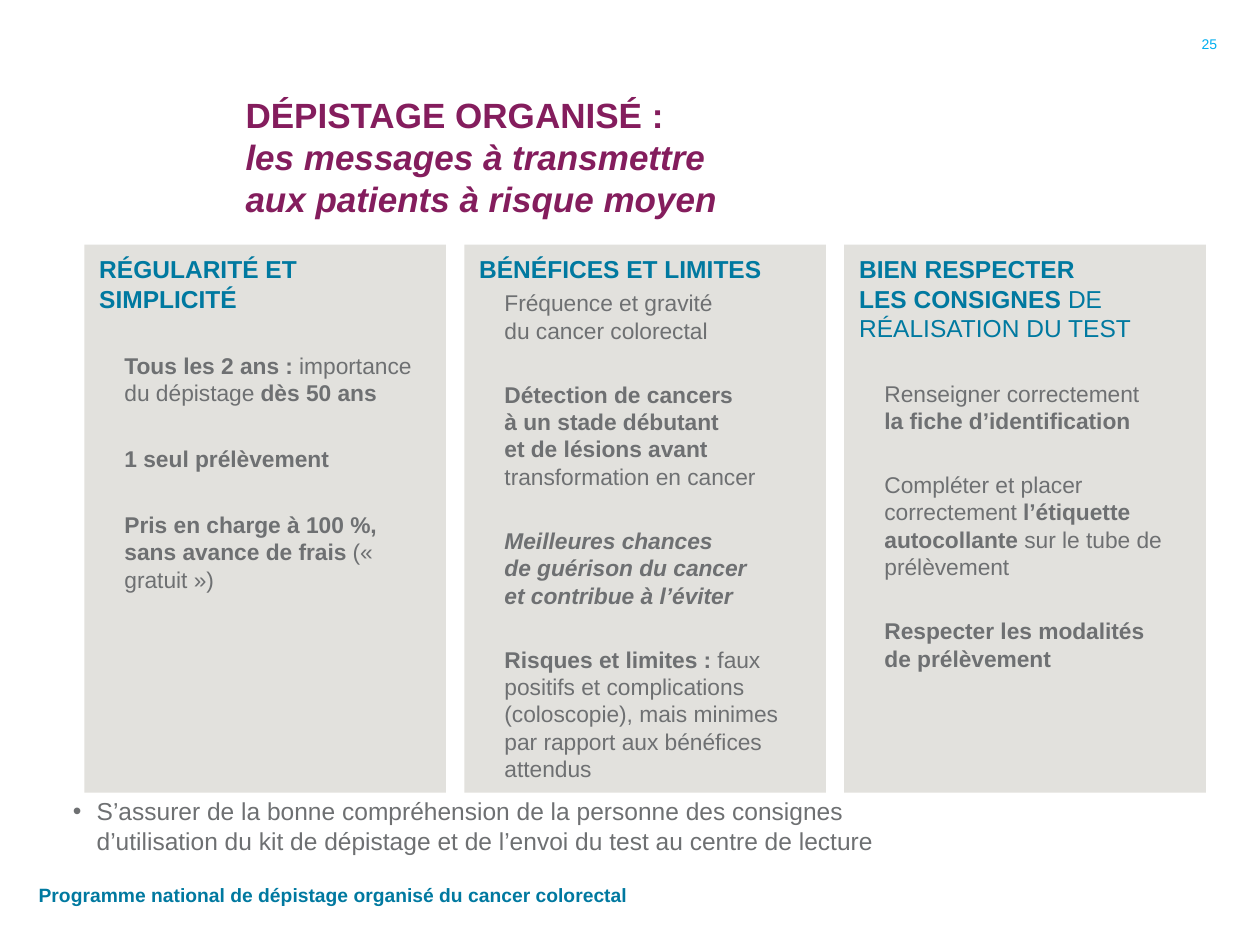
import pptx
import pptx.dml.color
import pptx.enum.shapes
import pptx.enum.text
import pptx.oxml
import pptx.oxml.ns
import pptx.util

Cm = pptx.util.Cm
Pt = pptx.util.Pt
ALIGN = pptx.enum.text.PP_ALIGN
ANCHOR = pptx.enum.text.MSO_ANCHOR

COLORS = {"plum": "841D5D", "teal": "0079A0", "gray": "6E7072",
          "panel": "E2E1DD", "cyan": "00AEEF"}

# Each paragraph is (space before, runs); each run is (text, style letters).
PANELS = [
    [
        (0, [("RÉGULARITÉ ET SIMPLICITÉ", "b")]),
        (22, [("Tous les 2 ans : ", "b"), ("importance du dépistage ", ""),
              ("dès 50 ans", "b")]),
        (22, [("1 seul prélèvement", "b")]),
        (22, [("Pris en charge à 100 %, sans avance de frais ", "b"),
              ("(« gratuit »)", "")]),
    ],
    [
        (0, [("BÉNÉFICES ET LIMITES", "b")]),
        (3, [("Fréquence et gravité \ndu cancer colorectal", "")]),
        (21, [("Détection de cancers \nà un stade débutant \n"
               "et de lésions avant ", "b"),
              ("transformation en cancer", "")]),
        (21, [("Meilleures chances \nde guérison du cancer \n"
               "et contribue à l’éviter", "bi")]),
        (21, [("Risques et limites : ", "b"),
              ("faux positifs et complications (coloscopie), mais minimes "
               "par rapport aux bénéfices attendus", "")]),
    ],
    [
        (0, [("BIEN RESPECTER \nLES CONSIGNES ", "b"),
             ("DE RÉALISATION DU TEST", "")]),
        (21, [("Renseigner correctement \n", ""),
              ("la fiche d’identification", "b")]),
        (21, [("Compléter et placer correctement ", ""),
              ("l’étiquette autocollante ", "b"),
              ("sur le tube de prélèvement", "")]),
        (21, [("Respecter les modalités \nde prélèvement", "b")]),
    ],
]


def set_all(item, values):
    for name, value in values.items():
        setattr(item, name, value)


def add_runs(para, runs, size, color):
    """Add styled runs, turning each newline into a line break."""
    for text, style in runs:
        for num, line in enumerate(text.split("\n")):
            if num:
                para.add_line_break()
            if not line:
                continue
            run = para.add_run()
            run.text = line
            set_all(run.font, {"name": "Arial", "size": Pt(size),
                               "bold": "b" in style, "italic": "i" in style})
            run.font.color.rgb = pptx.dml.color.RGBColor.from_string(
                COLORS[color])


def indent(para, left, first=0, bullet=None):
    props = para._p.get_or_add_pPr()
    props.set("marL", str(Cm(left)))
    props.set("indent", str(Cm(first)))
    if bullet:
        font = pptx.oxml.ns.qn("a:buFont")
        mark = pptx.oxml.ns.qn("a:buChar")
        props.append(props.makeelement(font, {"typeface": "Arial"}))
        props.append(props.makeelement(mark, {"char": bullet}))


def add_label(slide, area, runs, size, color, anchor, align=ALIGN.LEFT):
    box = slide.shapes.add_textbox(*map(Cm, area))
    set_all(box.text_frame, {"word_wrap": True, "vertical_anchor": anchor})
    para = box.text_frame.paragraphs[0]
    para.alignment = align
    add_runs(para, runs, size, color)
    return para


def add_panel(slide, left, paras):
    panel = slide.shapes.add_shape(
        pptx.enum.shapes.MSO_SHAPE.RECTANGLE,
        Cm(left), Cm(4.93), Cm(7.29), Cm(11.05))
    panel.shadow.inherit = False
    panel.fill.solid()
    panel.fill.fore_color.rgb = pptx.dml.color.RGBColor.from_string(
        COLORS["panel"])
    panel.line.fill.background()
    frame = panel.text_frame
    set_all(frame, {"word_wrap": True, "vertical_anchor": ANCHOR.TOP,
                    "margin_left": Cm(0.3), "margin_right": Cm(0.3),
                    "margin_top": Cm(0.2), "margin_bottom": Cm(0.2)})
    for num, (space, runs) in enumerate(paras):
        para = frame.add_paragraph() if num else frame.paragraphs[0]
        para.alignment = ALIGN.LEFT
        if num:
            set_all(para, {"level": 1, "space_before": Pt(space)})
            indent(para, 0.51)
            add_runs(para, runs, 13, "gray")
        else:
            add_runs(para, runs, 14, "teal")


def main():
    deck = pptx.Presentation()
    set_all(deck, {"slide_width": Cm(25.4), "slide_height": Cm(19.05)})
    slide = deck.slides.add_slide(deck.slide_layouts[6])

    add_label(slide, (4.7, 0.74, 19, 3.81),
              [("DÉPISTAGE ORGANISÉ : \n", "b"),
               ("les messages à transmettre \naux patients à risque moyen",
                "bi")], 20, "plum", ANCHOR.BOTTOM)
    for num, paras in enumerate(PANELS):
        add_panel(slide, 1.7 + 7.66 * num, paras)
    add_label(slide, (0.53, 17.53, 12.57, 1.02),
              [("Programme national de dépistage organisé du cancer "
                "colorectal", "b")], 11, "teal", ANCHOR.MIDDLE)
    add_label(slide, (23.7, 0.53, 1.09, 0.71), [("25", "")], 8, "cyan",
              ANCHOR.MIDDLE, ALIGN.RIGHT)
    advice = add_label(
        slide, (0.71, 15.93, 23.01, 1.83),
        [("S’assurer de la bonne compréhension de la personne des consignes \n"
          "d’utilisation du kit de dépistage et de l’envoi du test au centre "
          "de lecture", "")], 14, "gray", ANCHOR.TOP)
    indent(advice, 0.99, -0.48, "•")

    deck.save("out.pptx")


if __name__ == "__main__":
    main()
